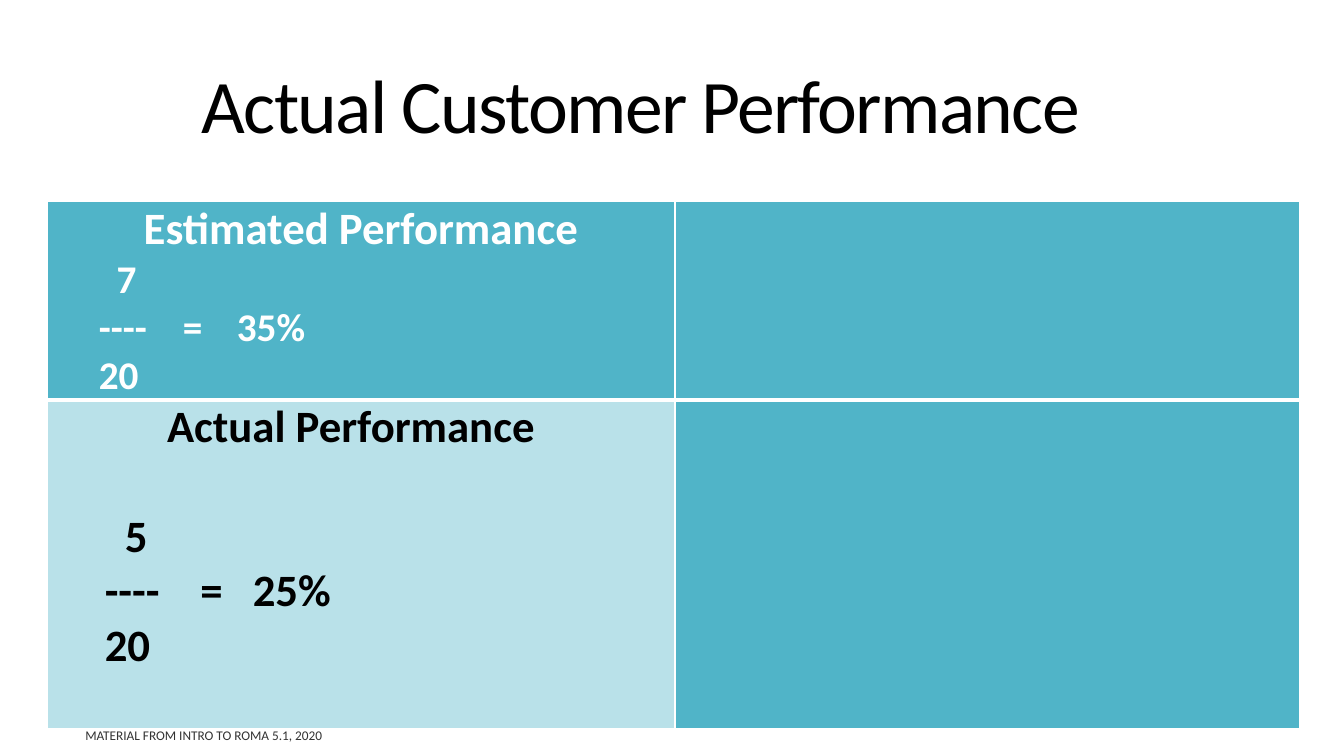
from dataclasses import dataclass

from lxml import etree
from pptx import Presentation
from pptx import util as u
from pptx.dml.color import RGBColor
from pptx.enum import text
from pptx.oxml import ns


@dataclass(frozen=True)
class Theme:
    font: str = "Calibri"
    black: str = "000000"
    white: str = "FFFFFF"
    gray: str = "333333"
    teal: str = "50B4C8"
    pale: str = "B9E1E9"
    title: float = 54
    head: float = 32
    small: float = 28
    foot: float = 9.5


THEME = Theme()
MID = text.MSO_ANCHOR.MIDDLE
CENTER = text.PP_ALIGN.CENTER
LEFT = text.PP_ALIGN.LEFT


def write(para, words, size, color, bold=False, align=LEFT, tabs=(),
          before=0, right=0, kern=0):
    """Fill a paragraph; tabs and right are in cm, before and kern in points."""
    props = para._p.get_or_add_pPr()
    if tabs:
        stops = etree.SubElement(props, ns.qn("a:tabLst"))
        for stop in tabs:
            etree.SubElement(stops, ns.qn("a:tab"), pos=str(u.Cm(stop)), algn="l")
    if right:
        props.set("marR", str(u.Cm(right)))
    if before:
        para.space_before = u.Pt(before)
    para.alignment = align
    run = para.add_run()
    run.text = words
    font = run.font
    font.name, font.size, font.bold = THEME.font, u.Pt(size), bold
    font.color.rgb = RGBColor.from_string(color)
    if kern:
        run._r.get_or_add_rPr().set("spc", str(round(kern * 100)))


def place(shape, left, top, width, height):
    shape.left, shape.top = u.Cm(left), u.Cm(top)
    shape.width, shape.height = u.Cm(width), u.Cm(height)


def edge(cell, **widths):
    """Draw white borders; widths in points are keyed by side, L R T B."""
    props = cell._tc.get_or_add_tcPr()
    for spot, side in enumerate("LRTB"):
        line = etree.Element(ns.qn("a:ln" + side), w=str(u.Pt(widths.get(side, 1))))
        fill = etree.SubElement(line, ns.qn("a:solidFill"))
        etree.SubElement(fill, ns.qn("a:srgbClr"), val=THEME.white)
        props.insert(spot, line)


def paint(cell, color):
    cell.fill.solid()
    cell.fill.fore_color.rgb = RGBColor.from_string(color)
    cell.margin_left = cell.margin_right = u.Cm(0.18)
    cell.margin_top = cell.margin_bottom = 0


def ratio(cell, head, top, base, rate, size, color, stops, gap=0, right=0):
    """Write a heading and a fraction; stops are the bar, top, sign and rate."""
    bar, over, sign, end = stops
    frame = cell.text_frame
    write(frame.paragraphs[0], head, THEME.head, color, bold=True,
          align=CENTER, right=right)
    lines = (
        (f"\t{top}", (over,), gap),
        (f"\t----\t=\t{rate}", (bar, sign, end), 0),
        (f"\t{base}", (bar,), 0),
    )
    for words, tabs, before in lines:
        write(frame.add_paragraph(), words, size, color, bold=True,
              tabs=tabs, before=before)


def add_title(slide):
    title = slide.shapes.title
    place(title, 1.19, 0.48, 29.92, 4.6)
    title.text_frame.vertical_anchor = MID
    para = title.text_frame.paragraphs[0]
    para.line_spacing = 0.85
    write(para, "Actual Customer Performance", THEME.title, THEME.black,
          align=CENTER, kern=-1.2)


def add_grid(slide):
    grid = slide.shapes.add_table(2, 2, u.Cm(1.19), u.Cm(5.08),
                                  u.Cm(31.57), u.Cm(13.21)).table
    for col, width in zip(grid.columns, (15.82, 15.75)):
        col.width = u.Cm(width)
    for row, height in zip(grid.rows, (4.93, 8.28)):
        row.height = u.Cm(height)
    fills = ((THEME.teal, THEME.teal), (THEME.pale, THEME.teal))
    for r, colors in enumerate(fills):
        for c, color in enumerate(colors):
            cell = grid.cell(r, c)
            paint(cell, color)
            edge(cell, **({"T": 3} if r else {"B": 3}))
    ratio(grid.cell(0, 0), "Estimated Performance", 7, 20, "35%",
          THEME.small, THEME.white, (1.12, 1.57, 3.24, 4.6))
    ratio(grid.cell(1, 0), "Actual Performance", 5, 20, "25%",
          THEME.head, THEME.black, (1.27, 1.78, 3.68, 5), gap=39, right=0.5)


def add_foot(slide):
    box = slide.shapes.add_textbox(u.Cm(1.9), u.Cm(18.21), u.Cm(13.97), u.Cm(0.64))
    frame = box.text_frame
    frame.word_wrap = True
    frame.vertical_anchor = MID
    write(frame.paragraphs[0], "MATERIAL FROM INTRO TO ROMA 5.1, 2020",
          THEME.foot, THEME.gray)


def main():
    deck = Presentation()
    deck.slide_width, deck.slide_height = u.Cm(33.87), u.Cm(19.05)
    slide = deck.slides.add_slide(deck.slide_layouts[5])
    add_title(slide)
    add_grid(slide)
    add_foot(slide)
    deck.save("out.pptx")


if __name__ == "__main__":
    main()
